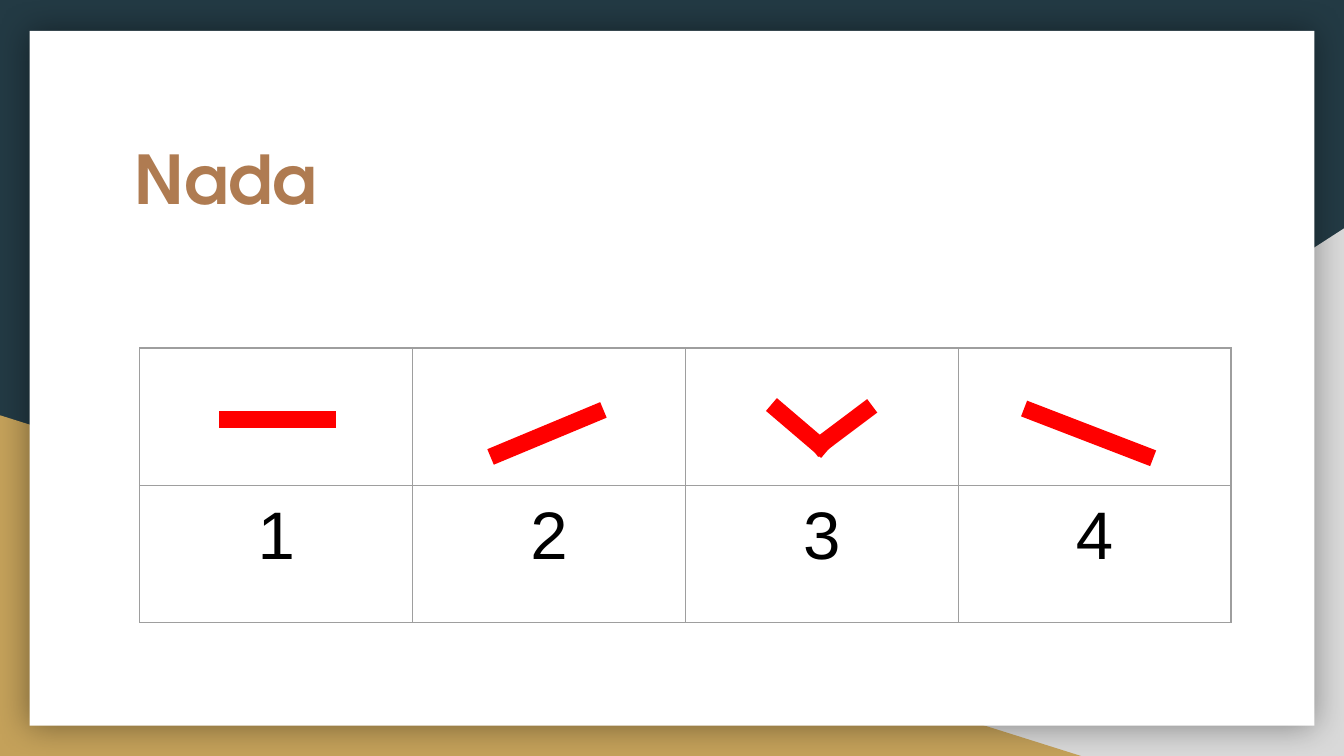
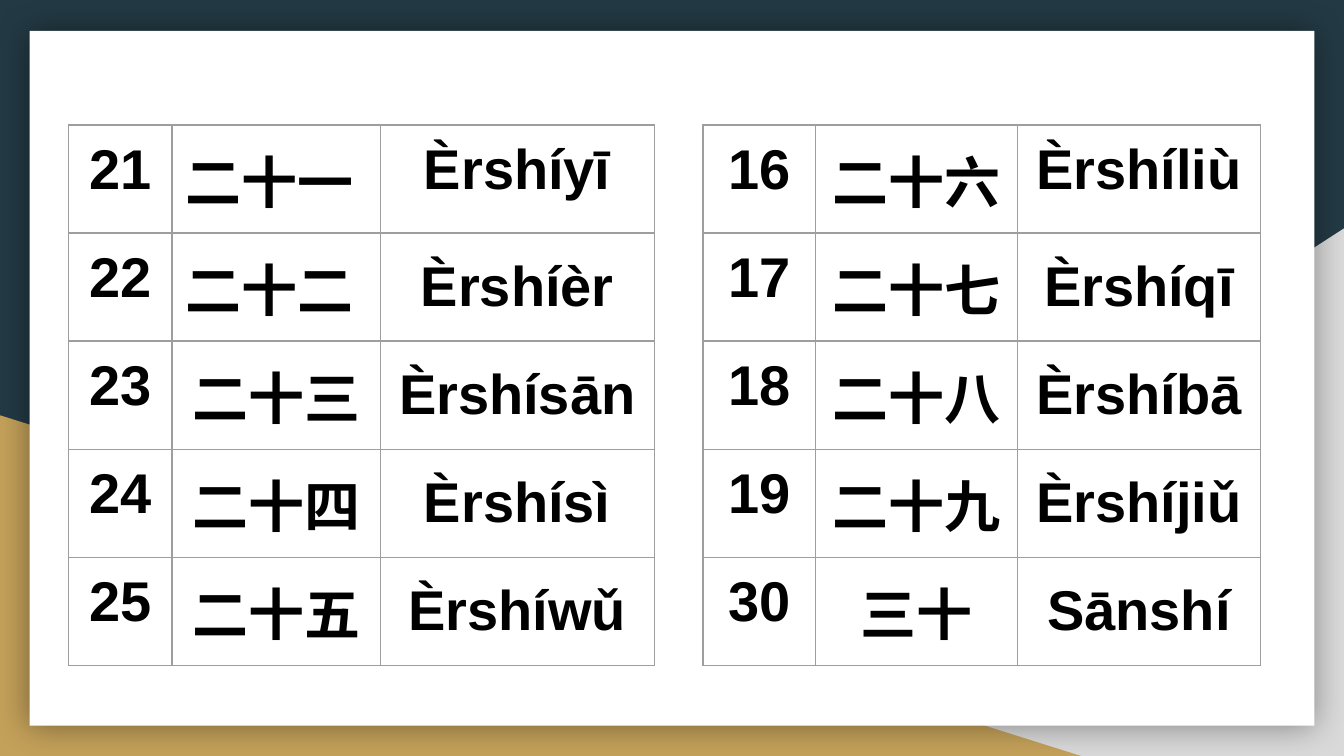
"""Build two slides on Mandarin tones and the numbers up to thirty."""
from lxml.etree import SubElement
from pptx import Presentation
from pptx.dml.color import RGBColor
from pptx.enum.shapes import MSO_CONNECTOR, MSO_SHAPE
from pptx.enum.text import MSO_ANCHOR, MSO_AUTO_SIZE, PP_ALIGN
from pptx.oxml import parse_xml
from pptx.oxml.ns import nsdecls, qn
from pptx.util import Inches, Pt

NAVY, GREY, GOLD, WHITE = "233A44", "D9D9D9", "C4A15A", "FFFFFF"
BROWN, RED, BLACK, RULE = "AF7B51", "FF0000", "000000", "9E9E9E"
TITLE_FONT = {"name": "TeX Gyre Adventor", "size": Pt(36), "bold": True}
TONE_FONT = {"name": "Arial", "size": Pt(36), "bold": False}
NUMBER_FONT = {"name": "Arial", "size": Pt(30), "bold": True}
MARGINS = ("margin_left", "margin_right", "margin_top", "margin_bottom")


def colour(value):
    return RGBColor.from_string(value)


def add_grid(page, place, widths, heights, rows, font):
    frame = page.shapes.add_table(len(rows), len(widths), *map(Inches, place))
    table = frame.table
    table.first_row = table.horz_banding = False
    for column, width in zip(table.columns, widths):
        column.width = Inches(width)
    for row, height in zip(table.rows, heights):
        row.height = Inches(height)
    frame.height = Inches(place[3])
    for row_index, row in enumerate(rows):
        for column_index, text in enumerate(row):
            cell = table.cell(row_index, column_index)
            for margin in MARGINS:
                setattr(cell, margin, Inches(0.1))
            properties = cell._tc.get_or_add_tcPr()
            for side in ("lnL", "lnR", "lnT", "lnB"):
                border = SubElement(properties, qn(f"a:{side}"), w=str(Pt(0.75)))
                fill = SubElement(border, qn("a:solidFill"))
                SubElement(fill, qn("a:srgbClr"), val=RULE)
            cell.fill.background()
            if not text:
                continue
            para = cell.text_frame.paragraphs[0]
            para.alignment = PP_ALIGN.CENTER
            if column_index == 2 and row_index and font is NUMBER_FONT:
                para.line_spacing = 1.15
            span = para.add_run()
            span.text = text
            span.font.color.rgb = colour(BLACK)
            for name, value in font.items():
                setattr(span.font, name, value)


deck = Presentation()
deck.slide_width = Inches(10)
deck.slide_height = deck.slide_width * 9 // 16
tones = deck.slides.add_slide(deck.slide_layouts[5])
numbers = deck.slides.add_slide(deck.slide_layouts[6])

master = deck.slide_master
master.background.fill.solid()
master.background.fill.fore_color.rgb = colour(NAVY)
backdrop = [
    (MSO_SHAPE.RIGHT_TRIANGLE, (3.92, 1.7, 6.08, 3.93), GREY),
    (MSO_SHAPE.RIGHT_TRIANGLE, (0, 3.09, 8.06, 2.54), GOLD),
    (MSO_SHAPE.RECTANGLE, (0.22, 0.23, 9.56, 5.17), WHITE),
]
for index, (kind, place, fill) in enumerate(backdrop):
    shape = tones.shapes.add_shape(kind, *map(Inches, place))
    shape.shadow.inherit = False
    shape.fill.solid()
    shape.fill.fore_color.rgb = colour(fill)
    shape.line.fill.background()
    if fill == GREY:
        shape.element.spPr.find(qn("a:xfrm")).set("flipH", "1")
    if fill == WHITE:
        effects = shape.element.spPr.find(qn("a:effectLst"))
        shadow = SubElement(effects, qn("a:outerShdw"), blurRad=str(Pt(18)), dist="0", dir="0")
        SubElement(SubElement(shadow, qn("a:srgbClr"), val=BLACK), qn("a:alpha"), val="40000")
    master.element.cSld.spTree.insert(2 + index, shape.element)

title = tones.shapes.title
title_box = {"left": 0.9, "top": 0.92, "width": 8.21, "height": 1.04}
for name, value in title_box.items():
    setattr(title, name, Inches(value))
title.text_frame.auto_size = MSO_AUTO_SIZE.NONE
title.text_frame.vertical_anchor = MSO_ANCHOR.TOP
for margin in MARGINS:
    setattr(title.text_frame, margin, Inches(0.1))
para = title.text_frame.paragraphs[0]
para.alignment = PP_ALIGN.LEFT
span = para.add_run()
span.text = "Nada"
span.font.color.rgb = colour(BROWN)
for name, value in TITLE_FONT.items():
    setattr(span.font, name, value)

tone_rows = [("", "", "", ""), ("1", "2", "3", "4")]
add_grid(tones, (1.04, 2.59, 8.11, 2.04), [2.03] * 4, [1.02] * 2, tone_rows, TONE_FONT)
tone_strokes = [
    (1.63, 3.12, 2.5, 3.12),
    (3.65, 3.4, 4.49, 3.05),
    (6.05, 3.35, 6.49, 3.02),
    (5.74, 3.01, 6.15, 3.36),
    (7.62, 3.04, 8.58, 3.41),
]
for ends in tone_strokes:
    stroke = tones.shapes.add_connector(MSO_CONNECTOR.STRAIGHT, *map(Inches, ends))
    stroke.line.color.rgb = colour(RED)
    stroke.line.width = Pt(9)
    stroke.element.spPr.append(parse_xml(f"<a:effectLst {nsdecls('a')}/>"))

first_half = [
    ("21", "二十一 ", "Èrshíyī"),
    ("22", "二十二 ", "Èrshíèr"),
    ("23", "二十三", "Èrshísān"),
    ("24", "二十四", "Èrshísì"),
    ("25", "二十五", "Èrshíwǔ"),
]
second_half = [
    ("16", "二十六 ", "Èrshíliù"),
    ("17", "二十七 ", "Èrshíqī"),
    ("18", "二十八", "Èrshíbā"),
    ("19", "二十九", "Èrshíjiǔ"),
    ("30", "三十", "Sānshí"),
]
number_grids = [
    (0.51, (0.77, 1.55, 2.04), first_half),
    (5.23, (0.84, 1.5, 1.81), second_half),
]
for left, widths, rows in number_grids:
    place = (left, 0.93, sum(widths), 3.8)
    add_grid(numbers, place, widths, [0.62] + [0.69] * 4, rows, NUMBER_FONT)

deck.save("out.pptx")
